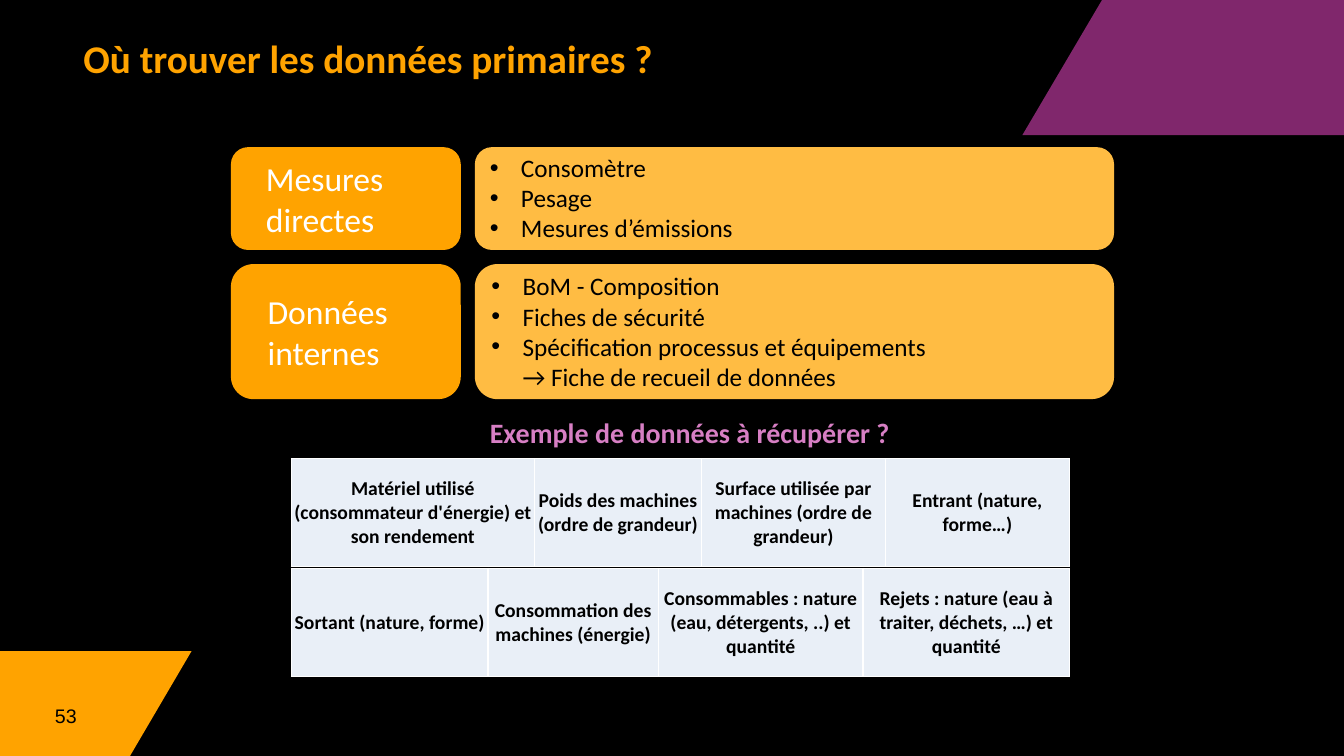
from lxml import etree
from pptx import Presentation
from pptx.dml.color import RGBColor
from pptx.enum import shapes, text
from pptx.oxml import ns
from pptx.util import Inches, Pt

TITLE = "Où trouver les données primaires ?"
PAGE_NUMBER = "53"
EXAMPLE_HEADING = "Exemple de données à récupérer ?"

# label, points, top, height
SOURCES = [
    ("Mesures directes", ["Consomètre", "Pesage", "Mesures d’émissions"], 1.46, 1.02),
    ("Données internes",
     ["BoM - Composition", "Fiches de sécurité",
      "Spécification processus et équipements\v→ Fiche de recueil de données"], 2.62, 1.34),
]

# each row: (text, column width)
EXAMPLES = [
    [("Matériel utilisé (consommateur d'énergie) et son rendement", 2.41),
     ("Poids des machines (ordre de grandeur)", 1.66),
     ("Surface utilisée par machines (ordre de grandeur)", 1.82),
     ("Entrant (nature, forme…)", 1.83)],
    [("Sortant (nature, forme)", 1.95),
     ("Consommation des machines (énergie)", 1.69),
     ("Consommables : nature (eau, détergents, ..) et quantité", 2.03),
     ("Rejets : nature (eau à traiter, déchets, …) et quantité", 2.05)],
]

CORNERS = [
    ("80276C", [(10.14, 1.34), (10.93, 0), (13.33, 0), (13.33, 1.34)]),
    ("FFA300", [(0, 7.5), (0, 6.46), (1.9, 6.46), (1.29, 7.5)]),
]

BLACK, WHITE, ORANGE, AMBER = "000000", "FFFFFF", "FFA300", "FFBC43"
PINK, CELL_BLUE = "D77FC4", "E9EFF7"
LABEL_LEFT, LABEL_WIDTH = 2.29, 2.28
POINTS_LEFT, POINTS_WIDTH = 4.71, 6.34
TABLE_LEFT, TABLE_TOP, ROW_HEIGHT, ROW_PITCH = 2.89, 4.55, 1.07, 1.09

ALIGN, ANCHOR = text.PP_ALIGN, text.MSO_ANCHOR


def paint(target, color):
    """Give a fill a solid colour."""
    target.solid()
    target.fore_color.rgb = RGBColor.from_string(color)


def add_child(parent, tag, **attributes):
    return etree.SubElement(parent, ns.qn(tag), attributes)


def write(frame, lines, size=18, color=BLACK, font="Calibri", bold=False,
          align=ALIGN.LEFT, indent=0, bullet=False, spacing=None):
    for index, line in enumerate(lines):
        paragraph = frame.add_paragraph() if index else frame.paragraphs[0]
        paragraph.text = line
        paragraph.alignment = align
        if spacing:
            paragraph.line_spacing = spacing
        properties = paragraph._p.get_or_add_pPr()
        properties.set("marL", str(Inches(indent)))
        properties.set("indent", str(Inches(-indent if bullet else 0)))
        if bullet:
            add_child(add_child(properties, "a:buClr"), "a:srgbClr", val=color)
            add_child(properties, "a:buFont", typeface="Arial")
            add_child(properties, "a:buChar", char="•")
        for run in paragraph.runs:
            run.font.name = font
            run.font.size = Pt(size)
            run.font.bold = bold
            run.font.color.rgb = RGBColor.from_string(color)


def set_frame(frame, anchor, side=0.1, edge=0.05, wrap=True):
    frame.word_wrap = wrap
    frame.vertical_anchor = anchor
    frame.margin_left = frame.margin_right = Inches(side)
    frame.margin_top = frame.margin_bottom = Inches(edge)
    return frame


def add_text(slide, box, line, anchor=ANCHOR.TOP, wrap=True, **style):
    area = slide.shapes.add_textbox(*map(Inches, box))
    write(set_frame(area.text_frame, anchor, wrap=wrap), [line], **style)


def finish(shape, color):
    """Flat fill with neither outline nor shadow."""
    paint(shape.fill, color)
    shape.line.fill.background()
    shape.shadow.inherit = False


def add_corner(slide, color, points):
    start, *others = [(Inches(x), Inches(y)) for x, y in points]
    builder = slide.shapes.build_freeform(*start)
    builder.add_line_segments(others, close=True)
    finish(builder.convert_to_shape(), color)


def add_card(slide, box, fill, lines, anchor, edge, **style):
    card = slide.shapes.add_shape(shapes.MSO_SHAPE.ROUNDED_RECTANGLE, *map(Inches, box))
    card.adjustments[0] = 0.167
    finish(card, fill)
    write(set_frame(card.text_frame, anchor, edge=edge), lines, **style)


def set_borders(cell, color, width):
    properties = cell._tc.get_or_add_tcPr()
    for index, side in enumerate(("a:lnL", "a:lnR", "a:lnT", "a:lnB")):
        border = etree.Element(ns.qn(side), w=str(Pt(width)))
        add_child(add_child(border, "a:solidFill"), "a:srgbClr", val=color)
        properties.insert(index, border)


def add_example_row(slide, top, entries):
    width = sum(column for _, column in entries)
    table = slide.shapes.add_table(1, len(entries), Inches(TABLE_LEFT), Inches(top),
                                   Inches(width), Inches(ROW_HEIGHT)).table
    table.first_row = table.horz_banding = False
    for index, (entry, column) in enumerate(entries):
        table.columns[index].width = Inches(column)
        cell = table.cell(0, index)
        cell.margin_left = cell.margin_right = Inches(0.01)
        cell.vertical_anchor = ANCHOR.MIDDLE
        paint(cell.fill, CELL_BLUE)
        set_borders(cell, WHITE, 0.96)
        write(cell.text_frame, [entry], size=14, bold=True, align=ALIGN.CENTER)


def main():
    deck = Presentation()
    deck.slide_width, deck.slide_height = Inches(13.33), Inches(7.5)
    slide = deck.slides.add_slide(deck.slide_layouts[6])
    paint(slide.background.fill, BLACK)

    for color, points in CORNERS:
        add_corner(slide, color, points)
    add_text(slide, (-0.22, 6.8, 1.08, 0.47), PAGE_NUMBER, anchor=ANCHOR.BOTTOM,
             size=14, font="Arial", align=ALIGN.RIGHT)
    add_text(slide, (0.73, 0.34, 8.23, 0.76), TITLE, size=28, color=ORANGE,
             bold=True, spacing=0.9)

    for row, entries in enumerate(EXAMPLES):
        add_example_row(slide, TABLE_TOP + row * ROW_PITCH, entries)
    add_text(slide, (4.76, 4.07, 4.17, 0.43), EXAMPLE_HEADING, wrap=False,
             size=20, color=PINK, bold=True)

    for label, points, top, height in SOURCES:
        add_card(slide, (LABEL_LEFT, top, LABEL_WIDTH, height), ORANGE, [label],
                 ANCHOR.MIDDLE, 0.05, size=24, color=WHITE, indent=0.2)
        add_card(slide, (POINTS_LEFT, top, POINTS_WIDTH, height), AMBER, points,
                 ANCHOR.TOP, 0, indent=0.31, bullet=True)

    deck.save("out.pptx")


if __name__ == "__main__":
    main()
